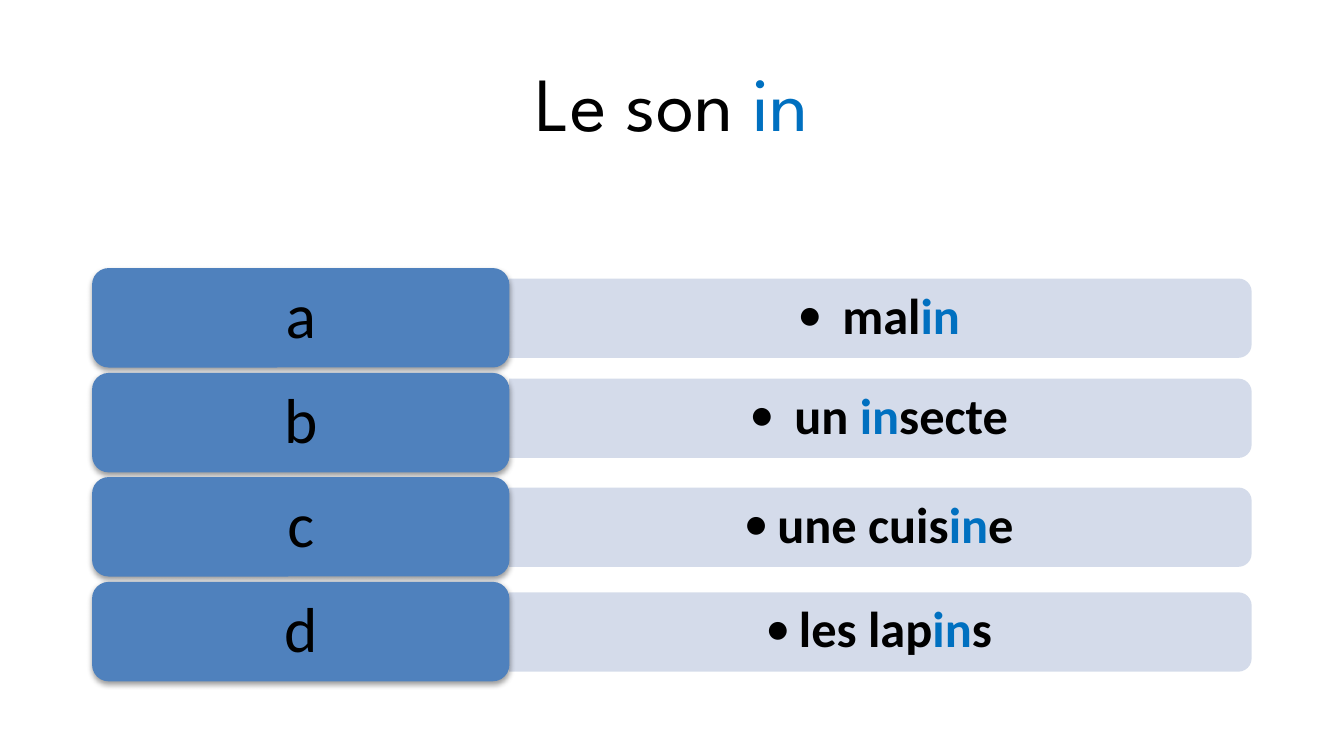
import dataclasses

import lxml.etree
import pptx
import pptx.dml.color
import pptx.enum.shapes
import pptx.enum.text
import pptx.oxml.ns
import pptx.util

PX = 4572  # EMU in one px: 200 px to the inch
SHAPE = pptx.enum.shapes.MSO_SHAPE


@dataclasses.dataclass(frozen=True)
class Theme:
    ink: str = "000000"
    accent: str = "0070C0"
    label_fill: str = "4F81BD"
    bar_fill: str = "D0D8E8"
    title_font: str = "League Spartan"
    body_font: str = "Calibri"
    title_size: int = 41
    label_size: int = 34
    word_size: int = 27


THEME = Theme()

# Letter, word split as (before, sound, after), vertical shift of the bar
ROWS = [
    ("a", (" mal", "in", ""), 0),
    ("b", (" un ", "in", "secte"), -7),
    ("c", ("une cuis", "in", "e"), 0),
    ("d", ("les lap", "in", "s"), 0),
]


def color(value):
    return pptx.dml.color.RGBColor.from_string(value)


def add_element(parent, tag, **attributes):
    element = lxml.etree.SubElement(parent, pptx.oxml.ns.qn(tag))
    for name, value in attributes.items():
        element.set(name, str(value))
    return element


def add_box(shapes, preset, box, fill):
    shape = shapes.add_shape(preset, *(length * PX for length in box))
    shape.shadow.inherit = False
    shape.fill.solid()
    shape.fill.fore_color.rgb = color(fill)
    shape.line.fill.background()
    return shape


def set_text(shape, parts, font, size, margins, bold=False):
    """Write (before, sound, after) centred, with the sound in the accent colour."""
    frame = shape.text_frame
    frame.word_wrap = True
    frame.vertical_anchor = pptx.enum.text.MSO_ANCHOR.MIDDLE
    frame.margin_left = frame.margin_right = margins[0] * PX
    frame.margin_top = frame.margin_bottom = margins[1] * PX
    paragraph = frame.paragraphs[0]
    paragraph.alignment = pptx.enum.text.PP_ALIGN.CENTER
    paragraph.font.name = font
    paragraph.font.size = pptx.util.Pt(size)
    paragraph.font.bold = bold
    for part, part_color in zip(parts, (THEME.ink, THEME.accent, THEME.ink)):
        if part:
            run = paragraph.add_run()
            run.text = part
            run.font.name = font
            run.font.size = pptx.util.Pt(size)
            run.font.bold = bold
            run.font.color.rgb = color(part_color)
    return paragraph


def add_title(slide, box):
    shape = slide.shapes.add_textbox(*(length * PX for length in box))
    set_text(shape, ("Le son ", "in"), THEME.title_font, THEME.title_size, (20, 10))


def add_bullet(paragraph, indent):
    properties = paragraph._p.get_or_add_pPr()
    properties.set("marL", str(indent * PX))
    properties.set("indent", str(-indent * PX))
    for tag, name, value in (("a:buFont", "typeface", THEME.body_font),
                             ("a:buChar", "char", "•")):
        element = lxml.etree.Element(pptx.oxml.ns.qn(tag), {name: value})
        properties.insert_element_before(element, "a:tabLst", "a:defRPr", "a:extLst")


def add_word(shapes, box, parts):
    left, top, width, height = box

    # Bar: turned a quarter so that its round corners are on the right
    bar_left = left + (width - height) // 2
    bar_top = top - (width - height) // 2
    bar = add_box(shapes, SHAPE.ROUND_2_SAME_RECTANGLE,
                  (bar_left, bar_top, height, width), THEME.bar_fill)
    bar.rotation = 90
    fill_color = bar.fill._xPr.find(".//" + pptx.oxml.ns.qn("a:srgbClr"))
    add_element(fill_color, "a:alpha", val=90000)

    # Bulleted word, a little smaller than the bar
    text_box = (left, top + 6, width - 6, height - 12)
    shape = shapes.add_textbox(*(length * PX for length in text_box))
    paragraph = set_text(shape, parts, THEME.body_font, THEME.word_size, (22, 12), True)
    paragraph.level = 1
    paragraph.line_spacing = 0.9
    add_bullet(paragraph, 50)


def add_label(shapes, box, letter):
    left, top, width, height = box

    # Raised plate
    plate = add_box(shapes, SHAPE.ROUNDED_RECTANGLE, box, THEME.label_fill)
    effects = plate._element.spPr.find(pptx.oxml.ns.qn("a:effectLst"))
    shadow = add_element(effects, "a:outerShdw", blurRad=40000, dist=20000,
                         dir=5400000, rotWithShape=0)
    add_element(add_element(shadow, "a:srgbClr", val="000000"), "a:alpha", val=38000)

    # Letter, inside the round corners
    inset = 7
    text_box = (left + inset, top + inset, width - 2 * inset, height - 2 * inset)
    shape = shapes.add_textbox(*(length * PX for length in text_box))
    paragraph = set_text(shape, (letter,), THEME.body_font, THEME.label_size, (28, 14))
    paragraph.line_spacing = 0.9


def add_word_list(slide, box):
    left, top, width, height = box
    label_width, label_height, bar_height = 621, 148, 118
    pitch = (height - label_height) / (len(ROWS) - 1)
    shapes = slide.shapes.add_group_shape().shapes
    for index, (letter, parts, shift) in enumerate(ROWS):
        row_top = top + round(index * pitch)
        bar_top = row_top + (label_height - bar_height) // 2 + shift
        add_word(shapes, (left + label_width, bar_top, width - label_width, bar_height), parts)
        add_label(shapes, (left, row_top, label_width, label_height), letter)


def main():
    presentation = pptx.Presentation()
    presentation.slide_width = 2000 * PX
    presentation.slide_height = 1125 * PX
    slide = presentation.slides.add_slide(presentation.slide_layouts[6])
    add_title(slide, (138, 41, 1724, 218))
    add_word_list(slide, (137, 399, 1726, 615))
    presentation.save("out.pptx")


if __name__ == "__main__":
    main()
